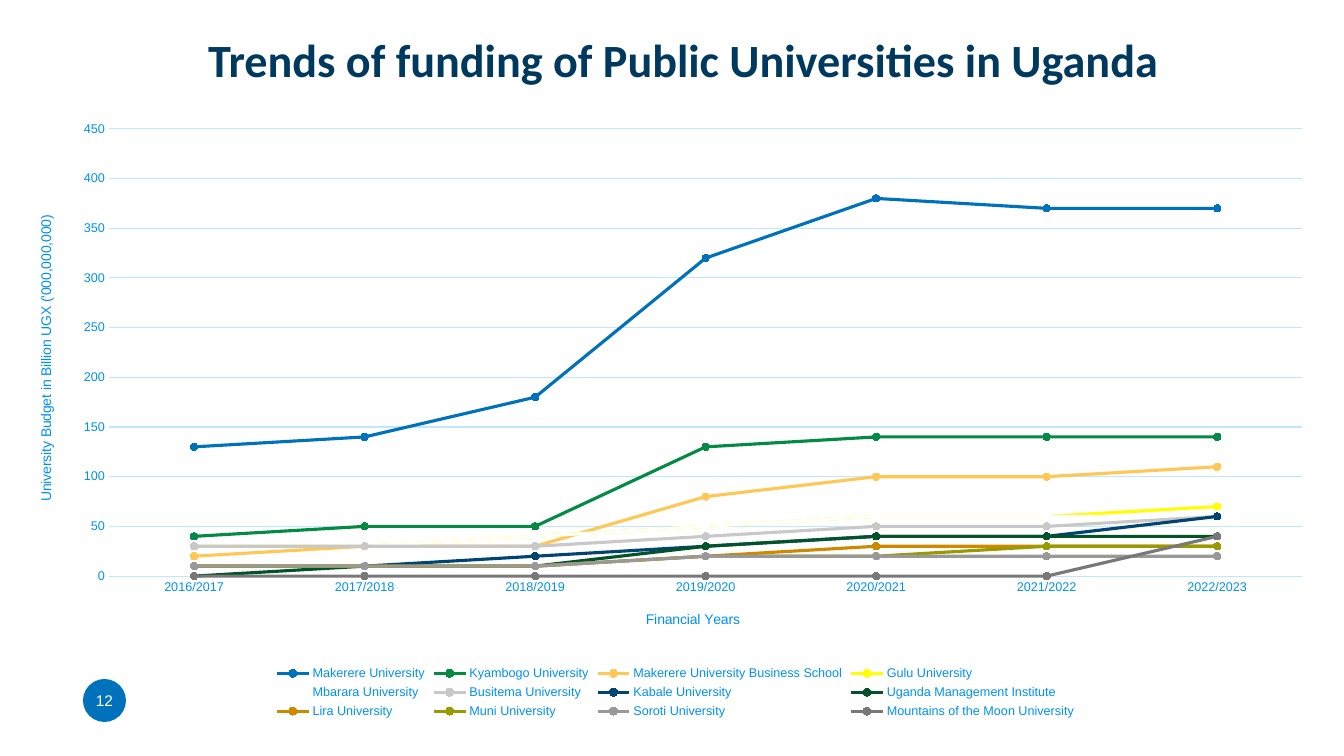
import pptx
import pptx.chart.data
import pptx.dml.color
import pptx.enum.chart
import pptx.enum.shapes
import pptx.enum.text
import pptx.oxml
import pptx.oxml.ns
import pptx.util

RGB = pptx.dml.color.RGBColor
NAVY = RGB(0x00, 0x39, 0x5E)
BLUE = RGB(0x00, 0x72, 0xBC)
SKY = RGB(0x00, 0x91, 0xF0)
PALE = RGB(0xC1, 0xE6, 0xFF)
WHITE = RGB(0xFF, 0xFF, 0xFF)
GREEN = RGB(0x03, 0x8B, 0x45)
AMBER = RGB(0xFF, 0xC7, 0x56)
YELLOW = RGB(0xFF, 0xFF, 0x00)
SILVER = RGB(0xC8, 0xC8, 0xC8)
DEEP_BLUE = RGB(0x00, 0x44, 0x71)
DEEP_GREEN = RGB(0x02, 0x53, 0x29)
OCHRE = RGB(0xCD, 0x89, 0x00)
OLIVE = RGB(0x99, 0x99, 0x00)
GREY = RGB(0x99, 0x99, 0x99)
DARK_GREY = RGB(0x78, 0x78, 0x78)

YEARS = [f"{year}/{year + 1}" for year in range(2016, 2023)]
BUDGETS = [
    ("Makerere University", BLUE, (130, 140, 180, 320, 380, 370, 370)),
    ("Kyambogo University", GREEN, (40, 50, 50, 130, 140, 140, 140)),
    ("Makerere University Business School", AMBER, (20, 30, 30, 80, 100, 100, 110)),
    ("Gulu University", YELLOW, (30, 30, 40, 50, 60, 60, 70)),
    ("Mbarara University", WHITE, (30, 30, 40, 50, 60, 60, 60)),
    ("Busitema University", SILVER, (30, 30, 30, 40, 50, 50, 60)),
    ("Kabale University", DEEP_BLUE, (10, 10, 20, 30, 40, 40, 60)),
    ("Uganda Management Institute", DEEP_GREEN, (0, 10, 10, 30, 40, 40, 40)),
    ("Lira University", OCHRE, (10, 10, 10, 20, 30, 30, 30)),
    ("Muni University", OLIVE, (10, 10, 10, 20, 20, 30, 30)),
    ("Soroti University", GREY, (10, 10, 10, 20, 20, 20, 20)),
    ("Mountains of the Moon University", DARK_GREY, (0, 0, 0, 0, 0, 0, 40)),
]


def px(length):
    return pptx.util.Emu(round(length * 914400 / 100.8))


def set_font(font, size, color, name="Arial", bold=False):
    font.name = name
    font.size = pptx.util.Pt(size)
    font.bold = bold
    font.color.rgb = color


def set_layout(part, inner=False, **fractions):
    """Place a chart part by fractions of the chart's size."""
    qn = pptx.oxml.ns.qn
    for old in part.findall(qn("c:layout")):
        part.remove(old)
    target = '<c:layoutTarget val="inner"/>' if inner else ""
    modes = "".join(f'<c:{key}Mode val="edge"/>' for key in "xy")
    values = "".join(f'<c:{key} val="{value}"/>' for key, value in fractions.items())
    layout = pptx.oxml.parse_xml(
        f"<c:layout {pptx.oxml.ns.nsdecls('c')}><c:manualLayout>"
        f"{target}{modes}{values}</c:manualLayout></c:layout>")
    before = [child for child in part if child.tag in (qn("c:tx"), qn("c:legendPos"))]
    part.insert(len(before), layout)


class SlideBuilder:
    def __init__(self, presentation):
        self.slide = presentation.slides.add_slide(presentation.slide_layouts[5])

    def title(self, text, left, top, width, height):
        title = self.slide.shapes.title
        title.left, title.top, title.width, title.height = map(
            px, (left, top, width, height))
        frame = title.text_frame
        frame.text = text
        frame.vertical_anchor = pptx.enum.text.MSO_ANCHOR.MIDDLE
        frame.paragraphs[0].alignment = pptx.enum.text.PP_ALIGN.CENTER
        set_font(frame.paragraphs[0].runs[0].font, 33, NAVY, "Calibri", True)

    def page_badge(self, number, left, top, diameter):
        badge = self.slide.shapes.add_shape(
            pptx.enum.shapes.MSO_SHAPE.OVAL, px(left), px(top), px(diameter), px(diameter))
        badge.shadow.inherit = False
        badge.fill.solid()
        badge.fill.fore_color.rgb = BLUE
        badge.line.fill.background()
        frame = badge.text_frame
        frame.margin_left = frame.margin_right = 0
        frame.text = number
        frame.vertical_anchor = pptx.enum.text.MSO_ANCHOR.MIDDLE
        frame.paragraphs[0].alignment = pptx.enum.text.PP_ALIGN.CENTER
        set_font(frame.paragraphs[0].runs[0].font, 11, WHITE)

    def axis(self, axis, title, x, y):
        axis.major_tick_mark = axis.minor_tick_mark = pptx.enum.chart.XL_TICK_MARK.NONE
        set_font(axis.tick_labels.font, 9, SKY)
        frame = axis.axis_title.text_frame
        frame.text = title
        set_font(frame.paragraphs[0].runs[0].font, 10, SKY)
        set_layout(axis.axis_title._element, x=x, y=y)

    def budget_chart(self, left, top, width, height):
        data = pptx.chart.data.CategoryChartData()
        data.categories = YEARS
        for university, _, budget in BUDGETS:
            data.add_series(university, budget)
        chart = self.slide.shapes.add_chart(
            pptx.enum.chart.XL_CHART_TYPE.LINE_MARKERS,
            px(left), px(top), px(width), px(height), data).chart
        chart.has_title = False
        set_font(chart.font, 10, NAVY)
        chart.plots[0].vary_by_categories = False
        set_layout(chart._chartSpace.chart.plotArea, inner=True,
                   x=0.059, y=0.057, w=0.929, h=0.71)

        self.axis(chart.category_axis, "Financial Years", 0.475, 0.817)
        chart.category_axis.format.line.color.rgb = PALE
        chart.category_axis.format.line.width = pptx.util.Pt(0.75)

        budget_axis = chart.value_axis
        self.axis(budget_axis, "University Budget in Billion UGX ('000,000,000)", 0.001, 0.19)
        budget_axis.minimum_scale, budget_axis.maximum_scale = 0, 450
        budget_axis.major_unit = 50
        budget_axis.format.line.fill.background()
        budget_axis.major_gridlines.format.line.color.rgb = PALE
        budget_axis.major_gridlines.format.line.width = pptx.util.Pt(0.75)

        chart.has_legend = True
        chart.legend.position = pptx.enum.chart.XL_LEGEND_POSITION.BOTTOM
        chart.legend.include_in_layout = False
        set_font(chart.legend.font, 9, SKY)
        set_layout(chart.legend._element, x=0.186, y=0.903, w=0.628, h=0.097)

        for series, (_, color, _) in zip(chart.plots[0].series, BUDGETS):
            series.smooth = False
            series.format.line.color.rgb = color
            series.format.line.width = pptx.util.Pt(2.25)
            marker = series.marker
            marker.style = pptx.enum.chart.XL_MARKER_STYLE.CIRCLE
            marker.size = 5
            marker.format.fill.solid()
            marker.format.fill.fore_color.rgb = color
            marker.format.line.color.rgb = color


def main():
    presentation = pptx.Presentation()
    presentation.slide_width, presentation.slide_height = px(1344), px(756)
    builder = SlideBuilder(presentation)
    builder.page_badge("12", 83, 679, 43)
    builder.title("Trends of funding of Public Universities in Uganda", 84, 25, 1199, 68)
    builder.budget_chart(33, 93, 1285, 630)
    presentation.save("out.pptx")


if __name__ == "__main__":
    main()
